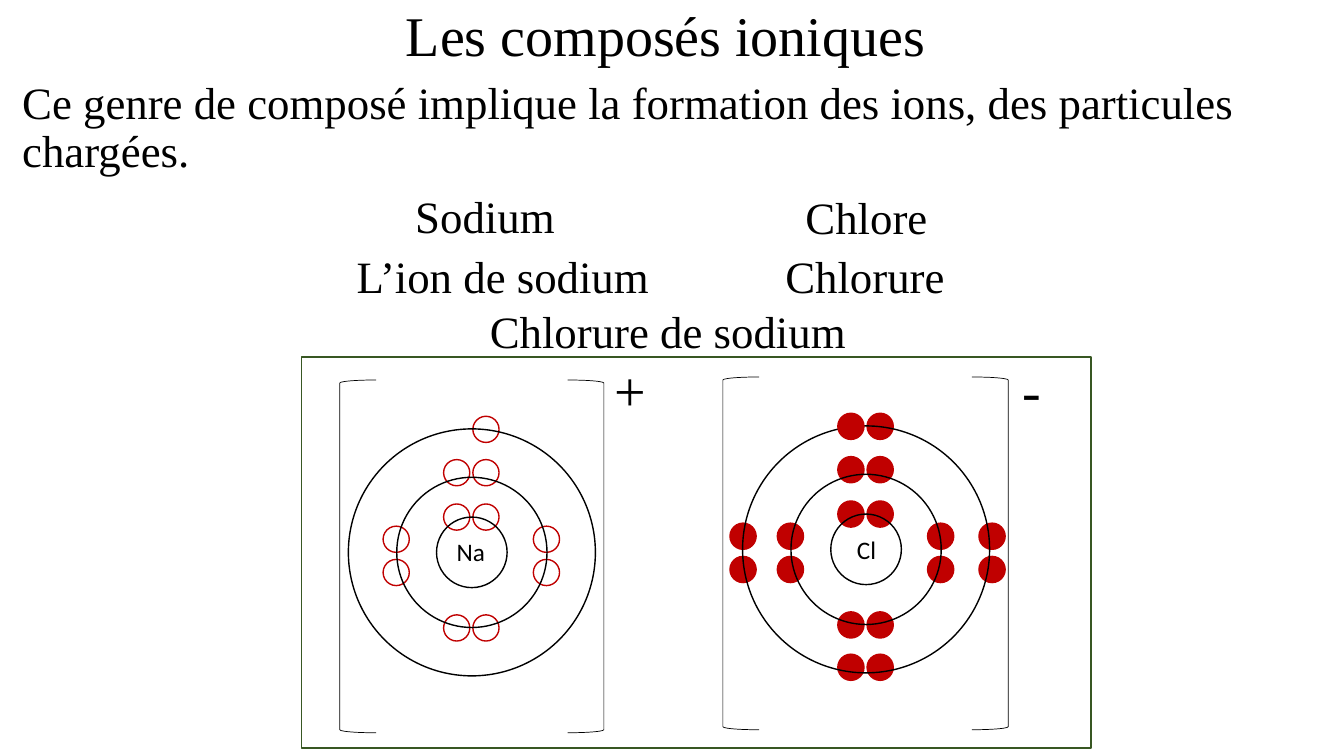
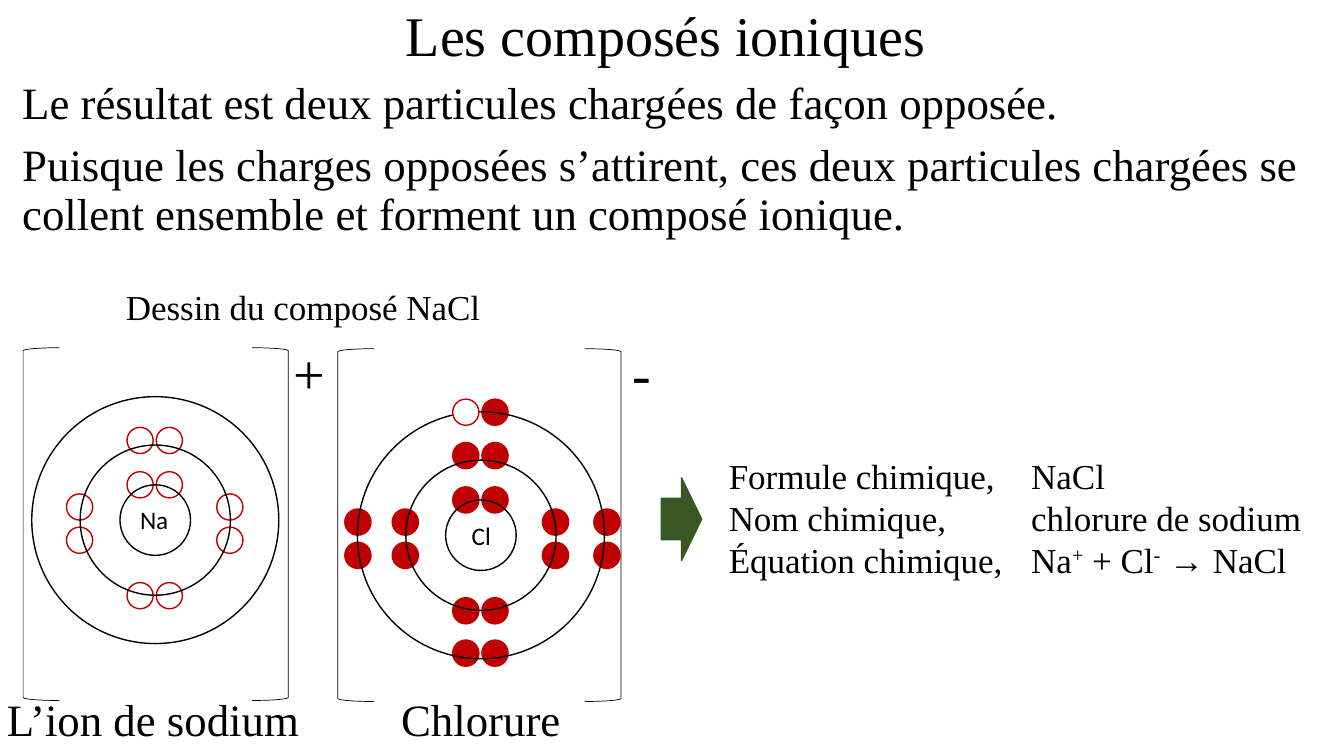
"""Build two slides on ionic compounds."""
from dataclasses import dataclass
from typing import NamedTuple

from lxml.etree import SubElement
from pptx import Presentation
from pptx.dml.color import RGBColor
from pptx.enum.shapes import MSO_SHAPE
from pptx.enum.text import MSO_ANCHOR, MSO_AUTO_SIZE, PP_ALIGN
from pptx.oxml.ns import qn
from pptx.util import Emu, Pt

SCALE = 9144
INK = {"black": "000000", "white": "FFFFFF", "red": "C00000", "green": "385723"}
SERIF, SANS = "Times New Roman", "Calibri"
TITLE = "Les composés ioniques "
DOT, RINGS = 26, (70, 149, 245)
ARM, TALL = 36, 350
TAB = 300


class Run(NamedTuple):
    text: str
    up: bool = False


class Spot(NamedTuple):
    x: int
    y: int


class Label(NamedTuple):
    text: str
    x: int
    y: int
    w: int
    h: int = 64
    size: int = 32
    font: str = SERIF


@dataclass
class Atom:
    tag: Label
    x: int
    y: int
    hue: str
    dots: list[Spot]
    left: int
    right: int
    top: int
    guest: str = ""


def row(y: int) -> list[Spot]:
    return [Spot(-15, y), Spot(14, y)]


def col(x: int) -> list[Spot]:
    return [Spot(x, -13), Spot(x, 20)]


CORE = row(-35) + row(-79) + col(-75) + col(74) + row(75)
LONE = Spot(14, -122)
GUEST = Spot(-15, -122)
FULL = CORE + [LONE] + col(-122) + col(125) + row(117)


def px(*sides: int) -> list[Emu]:
    return [Emu(round(side * SCALE)) for side in sides]


def tint(name: str) -> RGBColor:
    return RGBColor.from_string(INK[name])


def place(shape, x: int, y: int, w: int, h: int) -> None:
    shape.left, shape.top, shape.width, shape.height = px(x, y, w, h)


def write(para, runs: list[Run], size: int, font: str = SERIF) -> None:
    for text, up in runs:
        run = para.add_run()
        run.text = text
        run.font.size, run.font.name = Pt(size), font
        run.font.color.rgb = tint("black")
        if up:
            run.font._element.set("baseline", "30000")


def draw(slide, kind, box: tuple, line: str, fill: str = "", width: float = 1) -> None:
    shape = slide.shapes.add_shape(kind, *px(*box))
    shape.shadow.inherit = False
    shape.line.color.rgb, shape.line.width = tint(line), Pt(width)
    if fill:
        shape.fill.solid()
        shape.fill.fore_color.rgb = tint(fill)
    else:
        shape.fill.background()


def disc(slide, x: int, y: int, size: int, line: str, fill: str = "") -> None:
    draw(slide, MSO_SHAPE.OVAL, (x - size / 2, y - size / 2, size, size), line, fill)


def frame(slide, x: int, y: int, w: int, h: int):
    text = slide.shapes.add_textbox(*px(x, y, w, h)).text_frame
    text.word_wrap, text.auto_size = False, MSO_AUTO_SIZE.SHAPE_TO_FIT_TEXT
    return text


def label(slide, item: Label) -> None:
    text = frame(slide, item.x, item.y, item.w, item.h)
    write(text.paragraphs[0], [Run(item.text)], item.size, item.font)


def table(slide, box: tuple, lines: list[list[Run]], size: int) -> None:
    text = frame(slide, *box)
    for num, runs in enumerate(lines):
        para = text.add_paragraph() if num else text.paragraphs[0]
        tabs = SubElement(para._p.get_or_add_pPr(), qn("a:tabLst"))
        SubElement(tabs, qn("a:tab"), pos=str(TAB * SCALE), algn="l")
        write(para, runs, size)


def atom(slide, item: Atom) -> None:
    label(slide, item.tag)
    for spot in item.dots:
        disc(slide, item.x + spot.x, item.y + spot.y, DOT, "red", item.hue)
    for size in RINGS:
        disc(slide, item.x, item.y, size, "black")
    if item.guest:
        disc(slide, item.x + GUEST.x, item.y + GUEST.y, DOT, "red", item.guest)
    sides = ((MSO_SHAPE.LEFT_BRACKET, item.left), (MSO_SHAPE.RIGHT_BRACKET, item.right))
    for kind, x in sides:
        draw(slide, kind, (x, item.top, ARM, TALL), "black", width=0.5)


def sodium(x: int, y: int, dots: list[Spot], left: int, right: int, top: int) -> Atom:
    tag = Label("Na", x - 25, y - 21, 49, 40, 18, SANS)
    return Atom(tag, x, y, "white", dots, left, right, top)


def chlorine(x: int, y: int, left: int, right: int, top: int, guest: str) -> Atom:
    tag = Label("Cl", x - 19, y - 20, 39, 40, 18, SANS)
    return Atom(tag, x, y, "red", FULL, left, right, top, guest)


def page(deck, height: int, lines: list[str], atoms: list[Atom], labels: list[Label]):
    slide = deck.slides.add_slide(deck.slide_layouts[1])
    title, body = slide.placeholders
    place(title, 92, 3, 1150, 71)
    place(body, 12, 75, 1309, height)
    for shape in (title, body):
        shape.text_frame.word_wrap = True
        shape.text_frame.auto_size = MSO_AUTO_SIZE.NONE
    title.text_frame.vertical_anchor = MSO_ANCHOR.MIDDLE
    head = title.text_frame.paragraphs[0]
    head.alignment, head.line_spacing = PP_ALIGN.CENTER, 0.9
    write(head, [Run(TITLE)], 40)
    text = body.text_frame
    for num, line in enumerate(lines):
        para = text.add_paragraph() if num else text.paragraphs[0]
        props = para._p.get_or_add_pPr()
        props.set("marL", "0")
        props.set("indent", "0")
        SubElement(props, qn("a:buNone"))
        para.line_spacing, para.space_before = 0.9, Pt(10 if num else 0)
        write(para, [Run(line)], 32)
    for item in atoms:
        atom(slide, item)
    for item in labels:
        label(slide, item)
    return slide


def main() -> None:
    deck = Presentation()
    deck.slide_width, deck.slide_height = px(1333, 750)

    first = page(
        deck, 136,
        ["Ce genre de composé implique la formation des ions, des particules chargées."],
        [sodium(468, 548, CORE + [LONE], 337, 563, 377),
         chlorine(859, 545, 717, 964, 374, "red")],
        [Label("Sodium", 402, 182, 160), Label("Chlore", 789, 183, 142),
         Label("L’ion de sodium", 344, 242, 313), Label("Chlorure", 769, 242, 178),
         Label("Chlorure de sodium", 476, 296, 380),
         Label("+", 600, 348, 52, 77, 40), Label("-", 1004, 348, 39, 77, 40)],
    )
    draw(first, MSO_SHAPE.RECTANGLE, (299, 354, 783, 388), "green")

    second = page(
        deck, 206,
        ["Le résultat est deux particules chargées de façon opposée.",
         "Puisque les charges opposées s’attirent, ces deux particules chargées se "
         "collent ensemble et forment un composé ionique."],
        [sodium(154, 516, CORE, 23, 250, 345),
         chlorine(477, 531, 335, 580, 346, "white")],
        [Label("L’ion de sodium", -3, 681, 313), Label("Chlorure", 388, 681, 178),
         Label("Dessin du composé NaCl", 115, 278, 376, 52, 25),
         Label("+", 281, 331, 52, 77, 40), Label("-", 617, 331, 39, 77, 40)],
    )
    draw(second, MSO_SHAPE.RIGHT_ARROW, (656, 474, 40, 82), "green", "green")
    table(second, (713, 446, 594, 136), [
        [Run("Formule chimique,\tNaCl")],
        [Run("Nom chimique,\tchlorure de sodium")],
        [Run("Équation chimique,\tNa"), Run("+", True), Run(" + Cl"),
         Run("-", True), Run(" → NaCl")],
    ], 25)

    deck.save("out.pptx")


if __name__ == "__main__":
    main()
